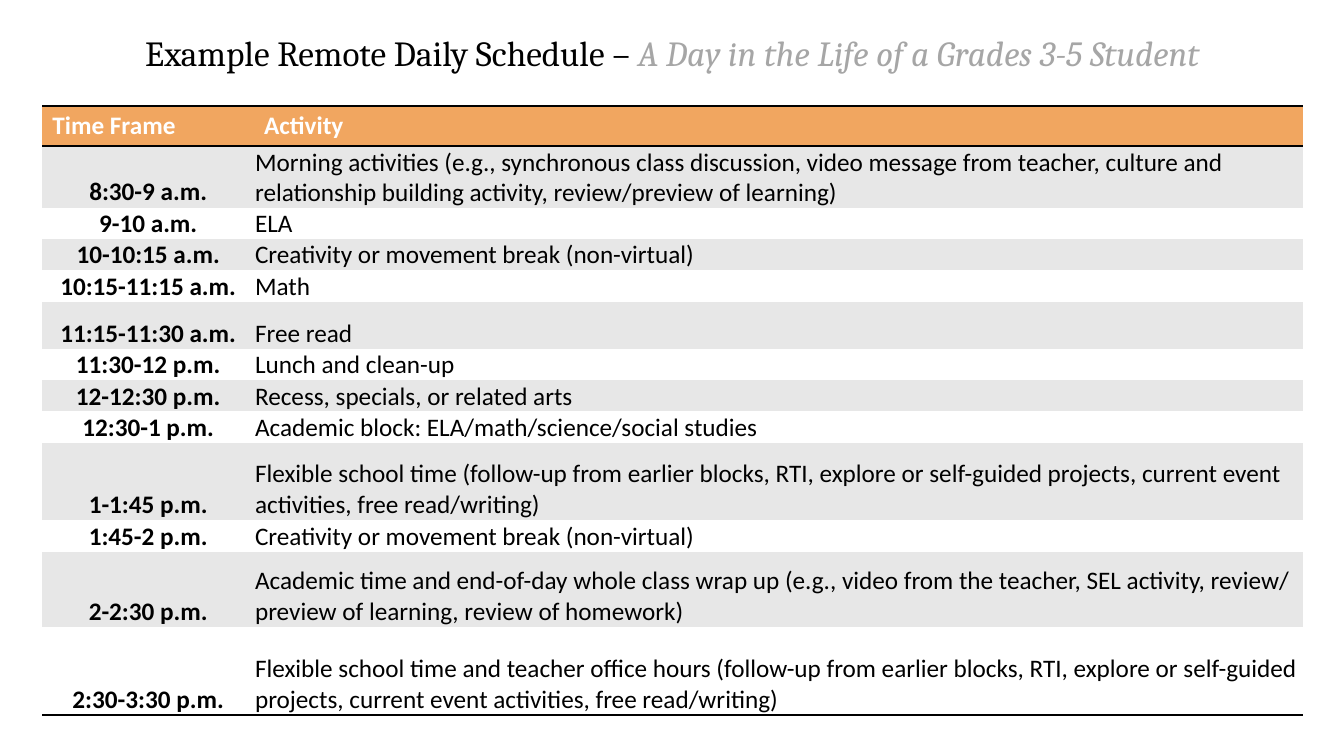
from dataclasses import dataclass

from lxml import etree
from pptx import Presentation
from pptx.dml.color import RGBColor
from pptx.enum.text import MSO_ANCHOR, PP_ALIGN
from pptx.oxml.ns import qn
from pptx.util import Pt

PX = 9144
MID, LOW = MSO_ANCHOR.MIDDLE, MSO_ANCHOR.BOTTOM
LEFT, CENTER = PP_ALIGN.LEFT, PP_ALIGN.CENTER
PLAIN = "{2D5ABB26-0587-4C30-8999-92F81FD0307C}"
HEX = {
    "ink": "000000",
    "gray": "A6A6A6",
    "white": "FFFFFF",
    "head": "F1A660",
    "band": "E7E7E7",
}


@dataclass
class Slot:
    time: str
    task: str
    high: int = 31


SLOTS = [
    Slot("8:30-9 a.m.", "Morning activities (e.g., synchronous class discussion, video message from teacher, "
         "culture and relationship building activity, review/preview of learning)", 58),
    Slot("9-10 a.m.", "ELA"),
    Slot("10-10:15 a.m.", "Creativity or movement break (non-virtual)"),
    Slot("10:15-11:15 a.m.", "Math"),
    Slot("11:15-11:30 a.m.", "Free read", 47),
    Slot("11:30-12 p.m.", "Lunch and clean-up"),
    Slot("12-12:30 p.m.", "Recess, specials, or related arts"),
    Slot("12:30-1 p.m.", "Academic block: ELA/math/science/social studies"),
    Slot("1-1:45 p.m.", "Flexible school time (follow-up from earlier blocks, RTI, explore or self-guided "
         "projects, current event\nactivities, free read/writing)", 77),
    Slot("1:45-2 p.m.", "Creativity or movement break (non-virtual)"),
    Slot("2-2:30 p.m.", "Academic time and end-of-day whole class wrap up (e.g., video from the teacher, "
         "SEL activity, review/\npreview of learning, review of homework)", 75),
    Slot("2:30-3:30 p.m.", "Flexible school time and teacher office hours (follow-up from earlier blocks, RTI, "
         "explore or self-guided\nprojects, current event activities, free read/writing)", 87),
]


def paint(font, face: str, size: float, tone: str) -> None:
    font.name = face
    font.size = Pt(size)
    font.color.rgb = RGBColor.from_string(HEX[tone])


def rule(cell, sides: list[str]) -> None:
    props = cell.get_or_add_tcPr()
    for spot, side in enumerate(sides):
        line = etree.Element(qn(f"a:{side}"), w=str(Pt(2)))
        fill = etree.SubElement(line, qn("a:solidFill"))
        etree.SubElement(fill, qn("a:srgbClr"), val=HEX["ink"])
        props.insert(spot, line)


def write(cell, text: str, tone: str, fill: str, bold: bool, align: PP_ALIGN) -> None:
    cell.fill.solid()
    cell.fill.fore_color.rgb = RGBColor.from_string(HEX[fill])
    cell.text_frame.text = text
    for para in cell.text_frame.paragraphs:
        para.alignment = align
        for run in para.runs:
            paint(run.font, "Calibri", 18, tone)
            run.font.bold = bold


def add_title(slide) -> None:
    box = slide.shapes.add_textbox(92 * PX, 12 * PX, 1150 * PX, 86 * PX)
    frame = box.text_frame
    frame.word_wrap = True
    frame.vertical_anchor = MID
    para = frame.paragraphs[0]
    para.alignment = CENTER
    para.line_spacing = 0.9
    parts = [
        ("Example Remote Daily Schedule – ", "ink", False),
        ("A Day in the Life of a Grades 3-5 Student", "gray", True),
    ]
    for text, tone, slant in parts:
        run = para.add_run()
        run.text = text
        paint(run.font, "Cambria", 25.2, tone)
        run.font.italic = slant


def add_plan(slide) -> None:
    highs = [38] + [slot.high for slot in SLOTS]
    shape = slide.shapes.add_table(len(highs), 2, 42 * PX, 105 * PX, 1250 * PX, sum(highs) * PX)
    table = shape.table
    next(shape.element.iter(qn("a:tableStyleId"))).text = PLAIN
    for col, wide in zip(table.columns, (210, 1040)):
        col.width = wide * PX
    for row, high in zip(table.rows, highs):
        row.height = high * PX
    for col, text in enumerate(("Time Frame", "Activity")):
        write(table.cell(0, col), text, "white", "head", True, LEFT)
    for row, slot in enumerate(SLOTS, 1):
        fill = "band" if row % 2 else "white"
        for col, text in enumerate((slot.time, slot.task)):
            cell = table.cell(row, col)
            write(cell, text, "ink", fill, col == 0, LEFT if col else CENTER)
            cell.vertical_anchor = LOW
            cell.margin_left = cell.margin_right = cell.margin_top = PX
            cell.margin_bottom = 0
    cells = list(shape.element.iter(qn("a:tc")))
    for cell in cells[:2]:
        rule(cell, ["lnT", "lnB"])
    for cell in cells[-2:]:
        rule(cell, ["lnB"])


def main() -> None:
    deck = Presentation()
    deck.slide_width, deck.slide_height = 1333 * PX, 750 * PX
    slide = deck.slides.add_slide(deck.slide_layouts[6])
    add_title(slide)
    add_plan(slide)
    deck.save("out.pptx")


if __name__ == "__main__":
    main()
